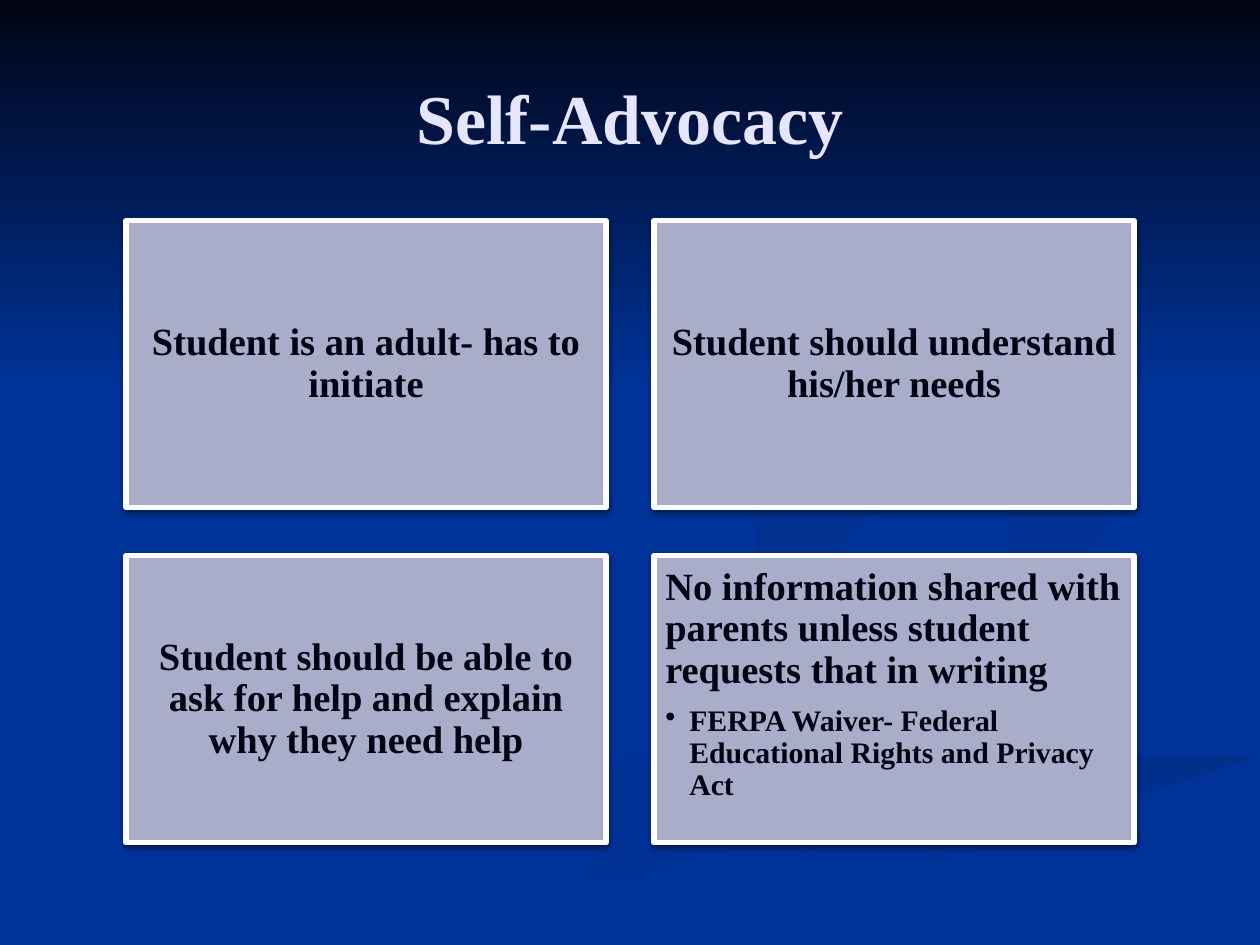
from lxml import etree
from pptx import Presentation
from pptx.dml.color import RGBColor
from pptx.enum.shapes import MSO_SHAPE
from pptx.enum.text import MSO_ANCHOR, PP_ALIGN
from pptx.oxml import parse_xml
from pptx.oxml.ns import nsdecls, qn
from pptx.util import Inches, Pt

FONT = "Times New Roman"
BLUE = RGBColor(0x00, 0x33, 0x99)
NIGHT = RGBColor(0x00, 0x05, 0x14)
SWIRL_DARK = RGBColor(0x00, 0x2F, 0x8C)
SWIRL_MID = RGBColor(0x00, 0x31, 0x93)
LAVENDER = RGBColor(0xAA, 0xAD, 0xCA)
PALE = RGBColor(0xE5, 0xE5, 0xFF)
WHITE = RGBColor(0xFF, 0xFF, 0xFF)

prs = Presentation()
prs.slide_width, prs.slide_height = Inches(10), Inches(7.5)
slide = prs.slides.add_slide(prs.slide_layouts[6])
slide.background.fill.solid()
slide.background.fill.fore_color.rgb = BLUE


def paint(shape, start, end, clockwise_angle):
    """Fill a borderless shape with a two-stop linear gradient."""
    shape.shadow.inherit = False
    shape.line.fill.background()
    shape.fill.gradient()
    shape.fill.gradient_angle = (360 - clockwise_angle) % 360
    for stop, color in zip(shape.fill.gradient_stops, (start, end)):
        stop.color.rgb = color


def style(paragraph, size, color):
    paragraph.font.name = FONT
    paragraph.font.size = Pt(size)
    paragraph.font.bold = True
    paragraph.font.color.rgb = color


# Background swirls: start colour, end colour, angle, outline in inches
swirls = [
    (BLUE, SWIRL_MID, 0, [
        (7.81, 5.53), (6.3, 5), (5.75, 4.59), (5.8, 4.84), (7.7, 5.51), (7.8, 5.79),
        (5.4, 6.5), (3, 7.49), (3.61, 7.49), (5.3, 6.74), (7.8, 6.05), (8, 5.81)]),
    (BLUE, SWIRL_MID, 45, [
        (9.43, 5.7), (9.05, 5.4), (7.58, 4.98), (7.24, 4.64), (7.46, 5), (8.8, 5.49),
        (9.18, 5.81), (8.94, 6.05), (9.32, 5.89)]),
    (SWIRL_DARK, BLUE, 90, [
        (5.03, 7.49), (5.71, 7.49), (7.2, 6.82), (9.98, 6.09), (9.98, 5.81), (7.64, 6.47),
        (6.3, 6.93)]),
    (SWIRL_MID, BLUE, 45, [
        (7.81, 4.6), (8.26, 4.96), (8.06, 4.68), (8.78, 4.39), (9.98, 4.2), (9.98, 4.02),
        (8.49, 4.27)]),
    (SWIRL_DARK, BLUE, 45, [
        (6.83, 4.3), (8.25, 4.02), (8.94, 3.44), (8.54, 2.83), (7.62, 2.33), (8.7, 2.99),
        (8.82, 3.54), (7.91, 3.92), (6.25, 4.26), (5.77, 4.62), (6.22, 5), (6.01, 4.56)]),
]
for start, end, angle, outline in swirls:
    builder = slide.shapes.build_freeform(*outline[0], scale=Inches(1))
    builder.add_line_segments(outline[1:], close=True)
    paint(builder.convert_to_shape(), start, end, angle)

night_sky = slide.shapes.add_shape(MSO_SHAPE.RECTANGLE, 0, 0, Inches(10), Inches(3.08))
paint(night_sky, NIGHT, BLUE, 90)

title = slide.shapes.add_textbox(Inches(0.5), Inches(0.3), Inches(9), Inches(1.25)).text_frame
title.word_wrap = True
title.vertical_anchor = MSO_ANCHOR.MIDDLE
title.text = "Self-Advocacy"
title.paragraphs[0].alignment = PP_ALIGN.CENTER
style(title.paragraphs[0], 40, PALE)

# Cards in a two-by-two grid; a second line is a bulleted detail
cards = [
    ["Student is an adult- has to initiate"],
    ["Student should understand his/her needs"],
    ["Student should be able to ask for help and explain why they need help"],
    ["No information shared with parents unless student requests that in writing",
     "FERPA Waiver- Federal Educational Rights and Privacy Act"],
]
CARD_WIDTH, CARD_HEIGHT, GAP = 3.81, 2.28, 0.38
for index, lines in enumerate(cards):
    row, column = divmod(index, 2)
    card = slide.shapes.add_shape(
        MSO_SHAPE.RECTANGLE,
        Inches(1 + column * (CARD_WIDTH + GAP)), Inches(1.75 + row * (CARD_HEIGHT + GAP)),
        Inches(CARD_WIDTH), Inches(CARD_HEIGHT))
    card.fill.solid()
    card.fill.fore_color.rgb = LAVENDER
    card.line.color.rgb = WHITE
    card.line.width = Pt(3)
    card.shadow.inherit = False
    card._element.spPr.find(qn("a:effectLst")).append(parse_xml(
        f'<a:outerShdw {nsdecls("a")} blurRad="40000" dist="20000" dir="5400000" rotWithShape="0">'
        '<a:srgbClr val="000000"><a:alpha val="38000"/></a:srgbClr></a:outerShdw>'))

    body = card.text_frame
    body.word_wrap = True
    body.margin_left = body.margin_right = body.margin_top = body.margin_bottom = Inches(0.09)
    has_detail = len(lines) > 1
    body.vertical_anchor = MSO_ANCHOR.TOP if has_detail else MSO_ANCHOR.MIDDLE
    body.text = "\n".join(lines)
    for level, paragraph in enumerate(body.paragraphs):
        paragraph.alignment = PP_ALIGN.LEFT if has_detail else PP_ALIGN.CENTER
        paragraph.line_spacing = 0.9
        paragraph.space_after = Pt(3 if level else 8)
        if level:
            paragraph.level = level
            properties = paragraph._p.get_or_add_pPr()
            properties.set("marL", str(Inches(0.19)))
            properties.set("indent", str(-Inches(0.19)))
            etree.SubElement(properties, qn("a:buChar")).set("char", "•")
        style(paragraph, 17 if level else 22, NIGHT)

prs.save("out.pptx")
